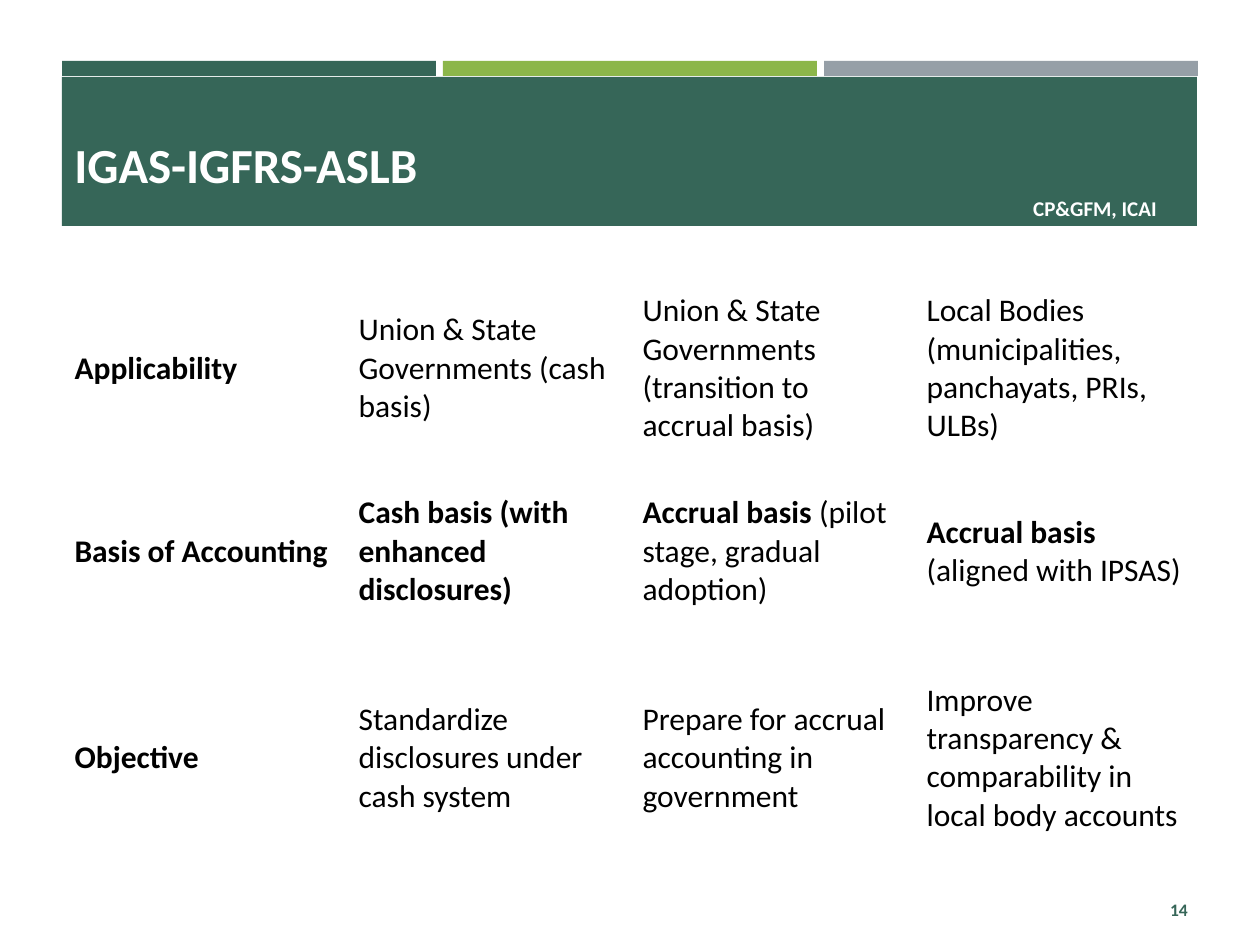
import pptx
import pptx.util
import pptx.dml.color
import pptx.enum.shapes
import pptx.enum.text

PX = 914400 / 126  # EMU in one px
FONT = "Calibri"
HUES = {"green": "366658", "lime": "8CB64A", "gray": "969FA7",
        "white": "FFFFFF", "black": "000000"}
ALIGN = pptx.enum.text.PP_ALIGN
MID = pptx.enum.text.MSO_ANCHOR.MIDDLE


def emu(px):
    return pptx.util.Emu(round(px * PX))


def rgb(hue):
    return pptx.dml.color.RGBColor.from_string(HUES[hue])


class Deck:
    """Holds the style and the current slide."""

    def __init__(self, wide, high):
        self.show = pptx.Presentation()
        self.show.slide_width = emu(wide)
        self.show.slide_height = emu(high)
        self.slide = self.show.slides.add_slide(self.show.slide_layouts[6])

    def text(self, frame, runs, size, hue, align=ALIGN.LEFT):
        """Fill a frame with one paragraph of (words, bold) runs."""
        frame.word_wrap = True
        para = frame.paragraphs[0]
        para.alignment = align
        for words, bold in runs:
            run = para.add_run()
            run.text = words
            run.font.name = FONT
            run.font.size = pptx.util.Pt(size)
            run.font.bold = bold
            run.font.color.rgb = rgb(hue)

    def rect(self, x, y, w, h, hue):
        shape = self.slide.shapes.add_shape(
            pptx.enum.shapes.MSO_SHAPE.RECTANGLE,
            emu(x), emu(y), emu(w), emu(h))
        shape.shadow.inherit = False
        shape.fill.solid()
        shape.fill.fore_color.rgb = rgb(hue)
        shape.line.fill.background()
        return shape

    def label(self, x, y, w, h, words, size, hue, align=ALIGN.LEFT):
        box = self.slide.shapes.add_textbox(emu(x), emu(y), emu(w), emu(h))
        box.text_frame.vertical_anchor = MID
        self.text(box.text_frame, [(words, True)], size, hue, align)

    def table(self, x, y, wide, highs, rows, size, hue):
        count = len(rows[0])
        grid = self.slide.shapes.add_table(
            len(rows), count, emu(x), emu(y),
            emu(wide * count), emu(sum(highs))).table
        grid.first_row = False
        grid.horz_banding = False
        for col in grid.columns:
            col.width = emu(wide)
        for r, (high, row) in enumerate(zip(highs, rows)):
            grid.rows[r].height = emu(high)
            for c, runs in enumerate(row):
                cell = grid.cell(r, c)
                cell.fill.background()
                cell.vertical_anchor = MID
                self.text(cell.text_frame, runs, size, hue)


def main():
    deck = Deck(1260, 945)
    left = 62

    # Three bars above the banner
    for i, hue in enumerate(("green", "lime", "gray")):
        deck.rect(left + i * 381, 61, 374, 15, hue)

    # Banner with its tag and title
    deck.rect(left, 77, 1135, 149, "green")
    tag = deck.rect(1007, 197, 176, 23, "green").text_frame
    tag.vertical_anchor = MID
    deck.text(tag, [("CP&GFM, ICAI", True)], 12, "white", ALIGN.CENTER)
    deck.label(left, 95, 981, 138, "IGAS-IGFRS-ASLB", 28, "white")

    # Comparison table
    rows = [
        [[("Applicability", True)],
         [("Union & State Governments (cash basis)", False)],
         [("Union & State Governments (transition to accrual basis)", False)],
         [("Local Bodies (municipalities, panchayats, PRIs, ULBs)", False)]],
        [[("Basis of Accounting", True)],
         [("Cash basis (with enhanced disclosures)", True)],
         [("Accrual basis ", True),
          ("(pilot stage, gradual adoption)", False)],
         [("Accrual basis ", True), ("(aligned with IPSAS)", False)]],
        [[("Objective", True)],
         [("Standardize disclosures under cash system", False)],
         [("Prepare for accrual accounting in government", False)],
         [("Improve transparency & comparability in local body accounts",
           False)]],
    ]
    deck.table(left, 265, 284, (207, 159, 254), rows, 18, "black")

    # Page number
    deck.label(1094, 885, 106, 50, "14", 10, "green", ALIGN.RIGHT)

    deck.show.save("out.pptx")


if __name__ == "__main__":
    main()
